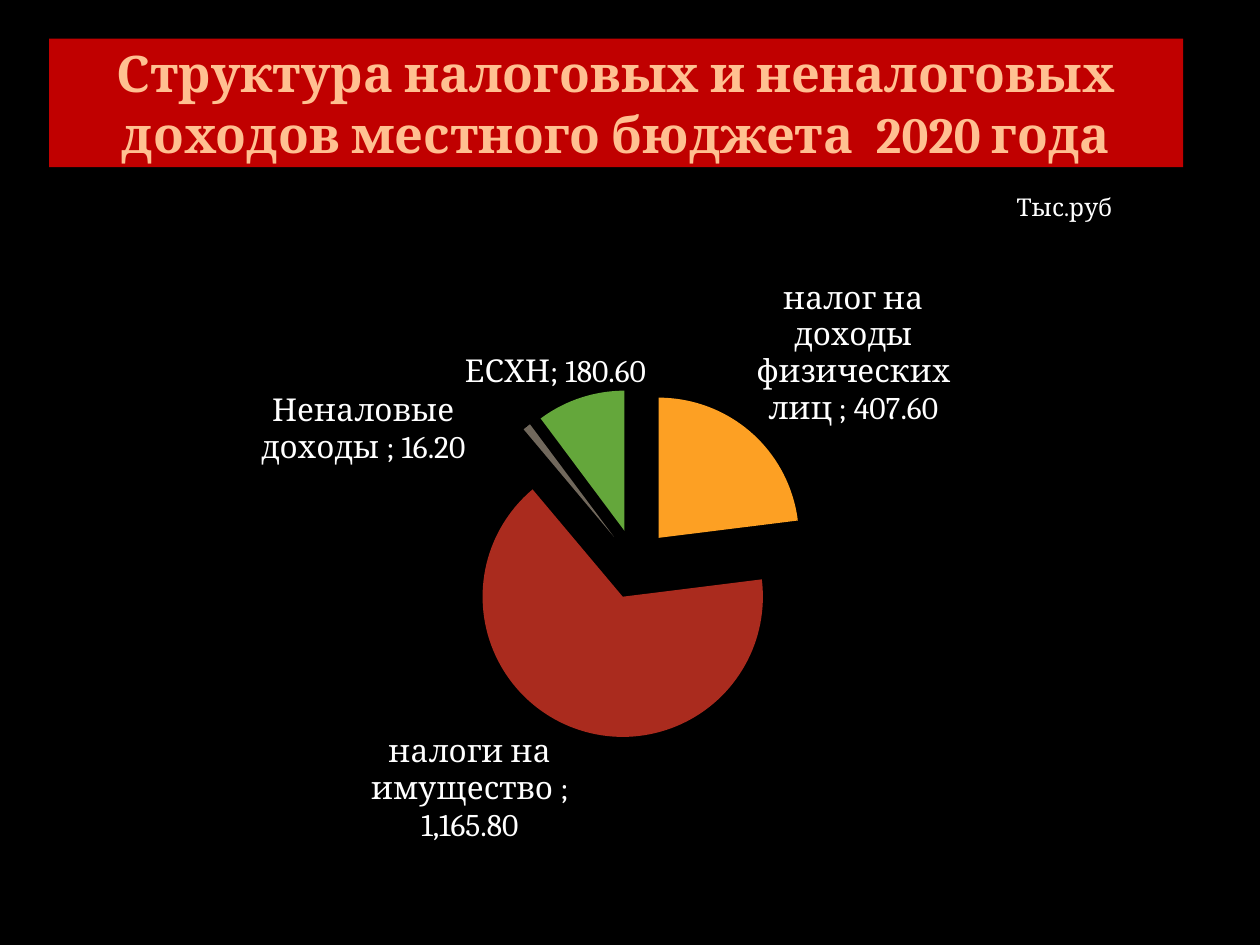
import pptx
import pptx.chart.data
import pptx.dml.color
import pptx.enum.chart
import pptx.enum.shapes
import pptx.enum.text
import pptx.oxml
import pptx.oxml.ns
import pptx.util

FONT = "Cambria"
WHITE = "FFFFFF"
INCOME = [
    ("налог на доходы физических лиц ", 407.6, "FDA023"),
    ("налоги на имущество ", 1165.8, "AA2B1E"),
    ("Неналовые доходы ", 16.2, "71685C"),
    ("ЕСХН", 180.6, "64A73B"),
]
LABEL_SHIFTS = {2: (-0.05, 0.07), 3: (0.06, 0)}
PIE_AREA = {"x": 0.35, "y": 0.26, "w": 0.31, "h": 0.54}


def color(value):
    return pptx.dml.color.RGBColor.from_string(value)


def style_font(font, size, fill=WHITE, bold=False):
    font.name, font.size, font.bold = FONT, pptx.util.Pt(size), bold
    font.color.rgb = color(fill)


def write(frame, text, align=pptx.enum.text.PP_ALIGN.LEFT, **font_format):
    paragraph = frame.paragraphs[0]
    paragraph.alignment = align
    run = paragraph.add_run()
    run.text = text
    style_font(run.font, **font_format)


def chart_xml(tag, body="", **attributes):
    pairs = "".join(f' {key}="{value}"' for key, value in attributes.items())
    namespace = pptx.oxml.ns.nsdecls("c")
    return pptx.oxml.parse_xml(f"<c:{tag} {namespace}{pairs}>{body}</c:{tag}>")


def manual_layout(modes="", **places):
    values = "".join(f'<c:{key} val="{value}"/>' for key, value in places.items())
    return f"<c:manualLayout>{modes}{values}</c:manualLayout>"


class BudgetSlide:
    """Build the budget slide from parts placed as shares of its size."""

    def __init__(self):
        self.deck = pptx.Presentation()
        self.deck.slide_width = pptx.util.Inches(10)
        self.deck.slide_height = pptx.util.Inches(7.5)
        self.slide = self.deck.slides.add_slide(self.deck.slide_layouts[6])
        background = self.slide.background.fill
        background.solid()
        background.fore_color.rgb = color("000000")

    def box(self, left, top, width, height):
        across, down = self.deck.slide_width, self.deck.slide_height
        return [int(share * side) for share, side in
                ((left, across), (top, down), (width, across), (height, down))]

    def banner(self, area, text, backdrop, **font_format):
        banner = self.slide.shapes.add_shape(
            pptx.enum.shapes.MSO_SHAPE.RECTANGLE, *self.box(*area))
        banner.shadow.inherit = False
        banner.fill.solid()
        banner.fill.fore_color.rgb = color(backdrop)
        banner.line.fill.background()
        banner.text_frame.word_wrap = True
        banner.text_frame.vertical_anchor = pptx.enum.text.MSO_ANCHOR.MIDDLE
        write(banner.text_frame, text, **font_format)

    def note(self, area, text, **font_format):
        note = self.slide.shapes.add_textbox(*self.box(*area))
        note.text_frame.word_wrap = True
        write(note.text_frame, text, **font_format)

    def pie(self, area, slices, size):
        data = pptx.chart.data.CategoryChartData(number_format="#,##0.00")
        data.categories = [name for name, _, _ in slices]
        data.add_series("Series 1", [value for _, value, _ in slices])
        chart = self.slide.shapes.add_chart(
            pptx.enum.chart.XL_CHART_TYPE.PIE, *self.box(*area), data).chart
        chart.has_legend = chart.has_title = False
        style_font(chart.font, size)
        plot = chart.plots[0]
        plot.vary_by_categories = True
        series = plot.series[0]
        for index, (_, _, fill) in enumerate(slices):
            wedge = series.points[index].format
            wedge.fill.solid()
            wedge.fill.fore_color.rgb = color(fill)
            wedge.line.fill.background()
        series._element.find(pptx.oxml.ns.qn("c:tx")).addnext(
            chart_xml("explosion", val=25))
        self.pie_labels(series.data_labels, size)
        plot_area = chart._chartSpace.chart.plotArea
        for layout in plot_area.findall(pptx.oxml.ns.qn("c:layout")):
            plot_area.remove(layout)
        modes = ('<c:layoutTarget val="inner"/><c:xMode val="edge"/>'
                 '<c:yMode val="edge"/>')
        plot_area.insert(0, chart_xml("layout", manual_layout(modes, **PIE_AREA)))

    def pie_labels(self, labels, size):
        labels.show_value = labels.show_category_name = True
        labels.show_percentage = False
        labels.number_format = "#,##0.00"
        labels.number_format_is_linked = False
        labels.position = pptx.enum.chart.XL_LABEL_POSITION.OUTSIDE_END
        style_font(labels.font, size)
        shown = "".join(
            f'<c:show{part} val="{int(part in ("Val", "CatName"))}"/>' for part in
            ("LegendKey", "Val", "CatName", "SerName", "Percent", "BubbleSize"))
        for place, (index, (x, y)) in enumerate(LABEL_SHIFTS.items()):
            labels._element.insert(place, chart_xml(
                "dLbl", f'<c:idx val="{index}"/><c:layout>{manual_layout(x=x, y=y)}'
                f'</c:layout><c:dLblPos val="outEnd"/>{shown}'))

    def save(self):
        self.deck.save("out.pptx")


def main():
    page = BudgetSlide()
    page.banner(
        (0.039, 0.041, 0.9, 0.136),
        "Структура налоговых и неналоговых доходов местного бюджета  2020 года",
        "C00000", align=pptx.enum.text.PP_ALIGN.CENTER,
        size=28.8, fill="FFC091", bold=True)
    page.pie((0.05, 0.233, 0.9, 0.687), INCOME, 18)
    page.note((0.797, 0.197, 0.133, 0.045), "Тыс.руб", size=14)
    page.save()


if __name__ == "__main__":
    main()
